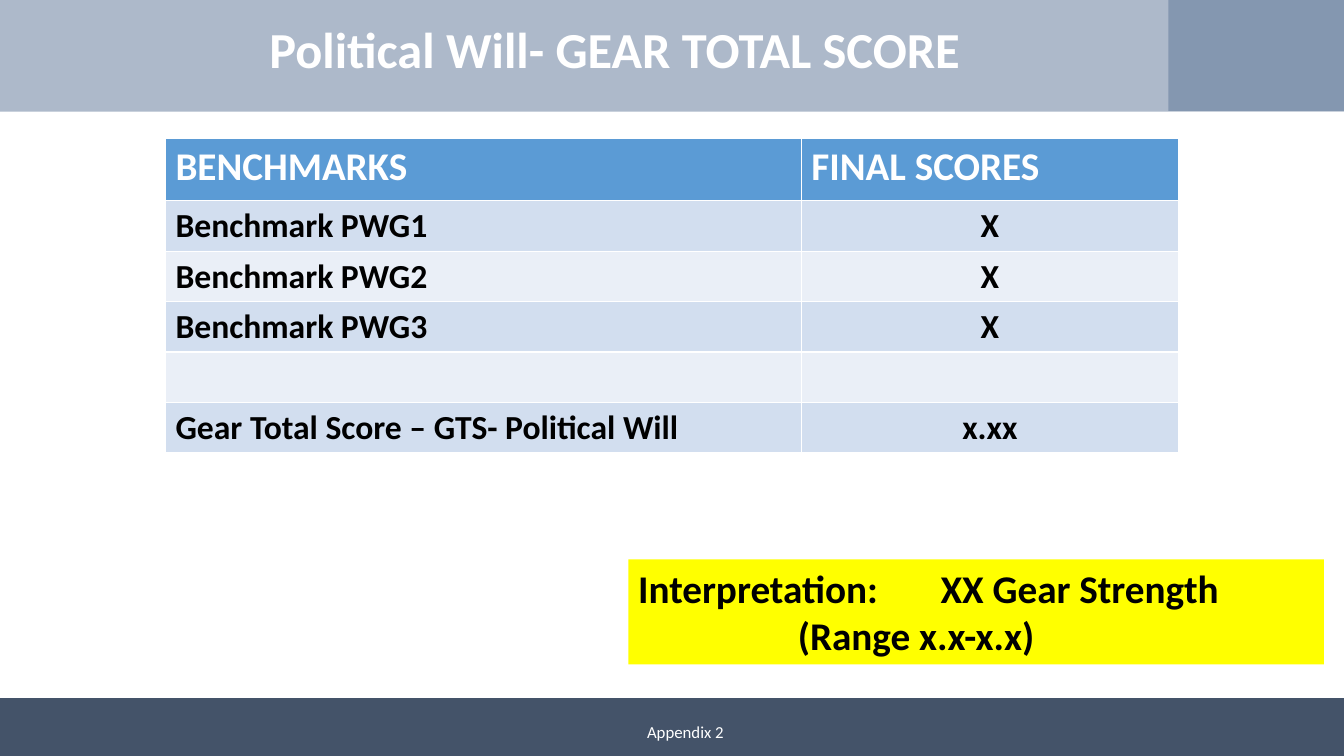
from lxml.etree import SubElement
from pptx import Presentation
from pptx.dml.color import RGBColor
from pptx.enum.shapes import MSO_SHAPE
from pptx.enum.text import MSO_ANCHOR, PP_ALIGN
from pptx.oxml.ns import qn
from pptx.util import Inches, Pt

WIDTH, HEIGHT = 13.33, 7.5
COLUMNS, ROWS = 160, 90
WHITE, BLACK, YELLOW = "FFFFFF", "000000", "FFFF00"
BAND, CORNER, FOOTER = "ADB9CA", "8497B0", "445369"
HEADER_FILL, ROW_FILLS = "5B9BD5", ("D2DEEF", "EAEFF7")


def color(value):
    return RGBColor.from_string(value)


class SlideBuilder:
    """Holds the text style and the slide; lengths are grid columns and rows."""

    font_name = "Calibri"

    def __init__(self, slide):
        self.slide = slide
        self.shapes = slide.shapes

    def across(self, columns):
        return Inches(columns * WIDTH / COLUMNS)

    def down(self, rows):
        return Inches(rows * HEIGHT / ROWS)

    def place(self, left, top, width, height):
        return self.across(left), self.down(top), self.across(width), self.down(height)

    def set_text(self, frame, text, size, text_color, bold=True, align=PP_ALIGN.LEFT):
        paragraph = frame.paragraphs[0]
        paragraph.text = text
        paragraph.alignment = align
        font_format = {"name": self.font_name, "size": Pt(size), "bold": bold}
        for run in paragraph.runs:
            for name, value in font_format.items():
                setattr(run.font, name, value)
            run.font.color.rgb = color(text_color)
        return paragraph

    def format_frame(self, frame, anchor):
        for name, value in {"word_wrap": True, "vertical_anchor": anchor}.items():
            setattr(frame, name, value)

    def rectangle(self, place, fill):
        shape = self.shapes.add_shape(MSO_SHAPE.RECTANGLE, *self.place(*place))
        shape.shadow.inherit = False
        shape.fill.solid()
        shape.fill.fore_color.rgb = color(fill)
        shape.line.fill.background()
        return shape

    def title(self, place, text, size):
        title = self.shapes.title
        title.left, title.top, title.width, title.height = self.place(*place)
        self.format_frame(title.text_frame, MSO_ANCHOR.MIDDLE)
        self.set_text(title.text_frame, text, size, WHITE, align=PP_ALIGN.CENTER)
        # Bring the title in front of the band
        title.element.getparent().append(title.element)

    def label(self, place, text, size):
        frame = self.shapes.add_textbox(*self.place(*place)).text_frame
        self.format_frame(frame, MSO_ANCHOR.MIDDLE)
        self.set_text(frame, text, size, WHITE, bold=False, align=PP_ALIGN.CENTER)

    def callout(self, place, text, size, fill, tab_stops):
        frame = self.rectangle(place, fill).text_frame
        self.format_frame(frame, MSO_ANCHOR.TOP)
        paragraph = self.set_text(frame, text, size, BLACK)
        tab_list = SubElement(paragraph._p.get_or_add_pPr(), qn("a:tabLst"))
        for stop in tab_stops:
            SubElement(tab_list, qn("a:tab"), pos=str(self.across(stop)), algn="l")

    def table(self, left, top, widths, header_height, row_height, records):
        heights = [header_height] + [row_height] * (len(records) - 1)
        place = self.place(left, top, sum(widths), sum(heights))
        table = self.shapes.add_table(len(records), len(widths), *place).table
        for column, width in zip(table.columns, widths):
            column.width = self.across(width)
        for index, (row, height, record) in enumerate(zip(table.rows, heights, records)):
            row.height = self.down(height)
            header = index == 0
            size, text_color = (28, WHITE) if header else (24, BLACK)
            fill = HEADER_FILL if header else ROW_FILLS[(index - 1) % 2]
            for position, (cell, text) in enumerate(zip(row.cells, record)):
                cell.fill.solid()
                cell.fill.fore_color.rgb = color(fill)
                centered = position == 1 and not header
                align = PP_ALIGN.CENTER if centered else PP_ALIGN.LEFT
                self.set_text(cell.text_frame, text, size, text_color, align=align)


def main():
    presentation = Presentation()
    presentation.slide_width = Inches(WIDTH)
    presentation.slide_height = Inches(HEIGHT)
    builder = SlideBuilder(presentation.slides.add_slide(presentation.slide_layouts[5]))

    # Top band, footer band and corner block
    builder.rectangle((0, 0, 160, 13.3), BAND)
    builder.rectangle((0, 83.1, 160, 6.9), FOOTER)
    builder.rectangle((139.1, 0, 20.9, 13.2), CORNER)

    # Title and footer text
    builder.title((0, -1.4, 146.4, 14.4), "Political Will- GEAR TOTAL SCORE", 36)
    builder.label((28.7, 84.7, 105.8, 4.8), "Appendix 2", 12)

    # Interpretation box
    builder.callout(
        (74.8, 66.6, 82.8, 12.5),
        "Interpretation:\tXX Gear Strength\v\t(Range x.x-x.x)",
        28, YELLOW, tab_stops=(19, 36),
    )

    # Benchmark scores
    benchmarks = [(f"Benchmark PWG{number}", "X") for number in range(1, 4)]
    records = [
        ("BENCHMARKS", "FINAL SCORES"),
        *benchmarks,
        ("", ""),
        ("Gear Total Score – GTS- Political Will", "x.xx"),
    ]
    builder.table(19.7, 16.5, (75.7, 44.9), 7.4, 6, records)

    presentation.save("out.pptx")


if __name__ == "__main__":
    main()
